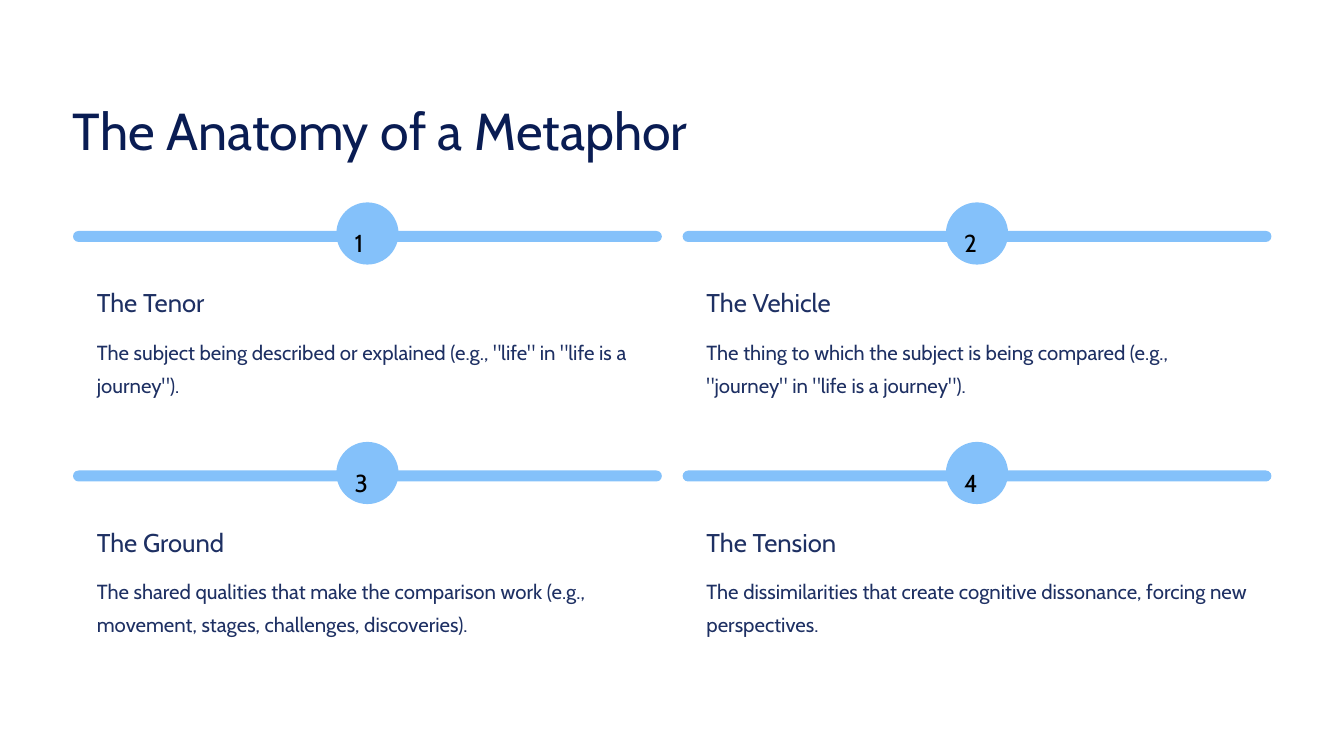
from pptx import Presentation
from pptx.dml.color import RGBColor
from pptx.enum import shapes, text
from pptx.util import Pt

FONT = "Cabin"
NAVY, INDIGO, SKY, BLACK = "091C53", "1E3063", "84C1FA", "000000"
LEFT, TOP = 62.6, 173.5
COLUMN_STEP, ROW_STEP = 522.5, 205.3
BAR_WIDTH, BAR_HEIGHT = 504.7, 9.4
BADGE_SIZE = 53.3
INDENT = 20.4

PARTS = [
    ("The Tenor", 'The subject being described or explained (e.g., "life" in "life is a journey").'),
    ("The Vehicle", 'The thing to which the subject is being compared (e.g., "journey" in "life is a journey").'),
    ("The Ground", "The shared qualities that make the comparison work (e.g., movement, stages, challenges, discoveries)."),
    ("The Tension", "The dissimilarities that create cognitive dissonance, forcing new perspectives."),
]


def color(value):
    return RGBColor.from_string(value)


def add_text(s, content, x, y, w, h, size, spacing, fill, wrap=False):
    tf = s.shapes.add_textbox(Pt(x), Pt(y), Pt(w), Pt(h)).text_frame
    tf.margin_left = tf.margin_top = tf.margin_right = tf.margin_bottom = 0
    tf.word_wrap = wrap
    tf.vertical_anchor = text.MSO_ANCHOR.TOP
    p = tf.paragraphs[0]
    p.text = content
    p.alignment = text.PP_ALIGN.LEFT
    p.line_spacing = Pt(spacing)
    p.font.name = FONT
    p.font.size = Pt(size)
    p.font.color.rgb = color(fill)


def add_pill(s, x, y, w, h):
    """Draw a rectangle with fully rounded ends; a square one is a disc."""
    sp = s.shapes.add_shape(shapes.MSO_SHAPE.ROUNDED_RECTANGLE, Pt(x), Pt(y), Pt(w), Pt(h))
    sp.adjustments[0] = 0.5
    sp.shadow.inherit = False
    sp.fill.solid()
    sp.fill.fore_color.rgb = color(SKY)
    sp.line.fill.background()


def add_part(s, number, heading, description, x, y):
    """Add one numbered part; y is the top of its badge."""
    add_pill(s, x, y + 24.5, BAR_WIDTH, BAR_HEIGHT)
    add_pill(s, x + (BAR_WIDTH - BADGE_SIZE) / 2, y, BADGE_SIZE, BADGE_SIZE)
    add_text(s, str(number), x + 241.3, y + 13.3, 21.6, 26.6, 21, 34, BLACK)
    add_text(s, heading, x + INDENT, y + 71.3, 223, 28, 22, 27.5, INDIGO)
    add_text(s, description, x + INDENT, y + 110.2, 464.4, 57, 17.5, 28.5, INDIGO, wrap=True)


def main():
    prs = Presentation()
    prs.slide_width, prs.slide_height = Pt(1152), Pt(648)
    s = prs.slides.add_slide(prs.slide_layouts[6])
    add_text(s, "The Anatomy of a Metaphor", LEFT, 82, 584, 56, 44.5, 55.5, NAVY)
    for i, (heading, description) in enumerate(PARTS):
        row, column = divmod(i, 2)
        add_part(s, i + 1, heading, description,
                 LEFT + column * COLUMN_STEP, TOP + row * ROW_STEP)
    prs.save("out.pptx")


if __name__ == "__main__":
    main()
